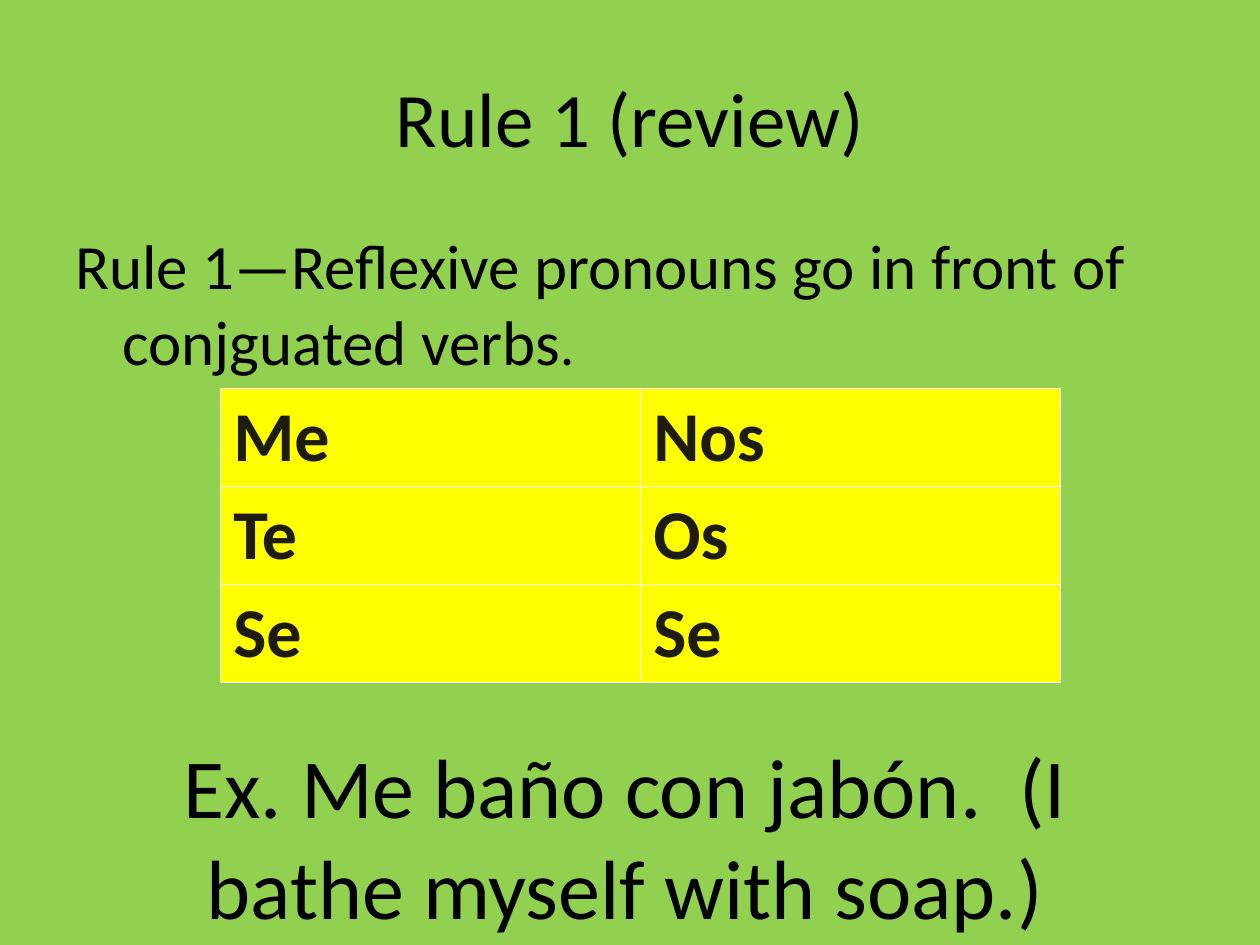
from lxml import etree
from pptx import Presentation
from pptx.dml.color import RGBColor
from pptx.enum.text import MSO_ANCHOR, PP_ALIGN
from pptx.oxml.ns import qn
from pptx.util import Cm, Pt

LEFT, MID = PP_ALIGN.LEFT, PP_ALIGN.CENTER
TOP, CORE = MSO_ANCHOR.TOP, MSO_ANCHOR.MIDDLE
HUES = {"back": "92D050", "text": "000000", "cell": "FFFF00",
        "word": "1E1C11", "edge": "FFFFFF"}
PAIRS = [("Me", "Nos"), ("Te", "Os"), ("Se", "Se")]


def hue(name):
    return RGBColor.from_string(HUES[name])


class Deck:
    """Holds the text style and the current slide."""

    face = "Calibri"

    def __init__(self, wide, high):
        self.prs = Presentation()
        self.prs.slide_width, self.prs.slide_height = Cm(wide), Cm(high)
        self.slide = self.prs.slides.add_slide(self.prs.slide_layouts[6])
        fill = self.slide.background.fill
        fill.solid()
        fill.fore_color.rgb = hue("back")

    def label(self, para, text, size, tone="text", bold=False):
        run = para.add_run()
        run.text = text
        look = {"name": self.face, "size": Pt(size), "bold": bold}
        for key, value in look.items():
            setattr(run.font, key, value)
        run.font.color.rgb = hue(tone)

    def text(self, box, runs, align=MID, anchor=TOP, hang=0):
        """Add one paragraph of (text, size) runs; hang is its hanging indent."""
        frame = self.slide.shapes.add_textbox(*map(Cm, box)).text_frame
        look = {"word_wrap": True, "vertical_anchor": anchor}
        for key, value in look.items():
            setattr(frame, key, value)
        para = frame.paragraphs[0]
        para.alignment = align
        if hang:
            props = para._p.get_or_add_pPr()
            props.set("marL", str(Cm(hang)))
            props.set("indent", str(-Cm(hang)))
        for words, size in runs:
            self.label(para, words, size)

    def edge(self, cell):
        """Draw a thin line on all four sides; lines must precede the fill."""
        props = cell._tc.get_or_add_tcPr()
        for spot, side in enumerate(("a:lnL", "a:lnR", "a:lnT", "a:lnB")):
            line = etree.Element(qn(side), w=str(Pt(1)))
            solid = etree.SubElement(line, qn("a:solidFill"))
            etree.SubElement(solid, qn("a:srgbClr"), val=HUES["edge"])
            props.insert(spot, line)

    def table(self, box, rows, size):
        grid = self.slide.shapes.add_table(
            len(rows), len(rows[0]), *map(Cm, box)).table
        for r, row in enumerate(rows):
            for c, word in enumerate(row):
                cell = grid.cell(r, c)
                cell.fill.solid()
                cell.fill.fore_color.rgb = hue("cell")
                self.edge(cell)
                self.label(cell.text_frame.paragraphs[0], word, size,
                           "word", True)


def main():
    deck = Deck(25.4, 19.05)
    deck.text((1.27, 0.76, 22.86, 3.18), [("Rule 1 (review)", 44)],
              anchor=CORE)
    rule = "Rule 1—Reflexive pronouns go in front of conjguated verbs"
    deck.text((1.27, 4.45, 22.86, 12.57), [(rule, 36), (".", 32)],
              align=LEFT, hang=0.95)
    deck.table((4.45, 7.83, 16.93, 5.93), PAIRS, 40)
    deck.text((2.12, 14.68, 20.96, 4.37),
              [("Ex. Me baño con jabón.  (I bathe myself with soap.)", 48)])
    deck.prs.save("out.pptx")


if __name__ == "__main__":
    main()
